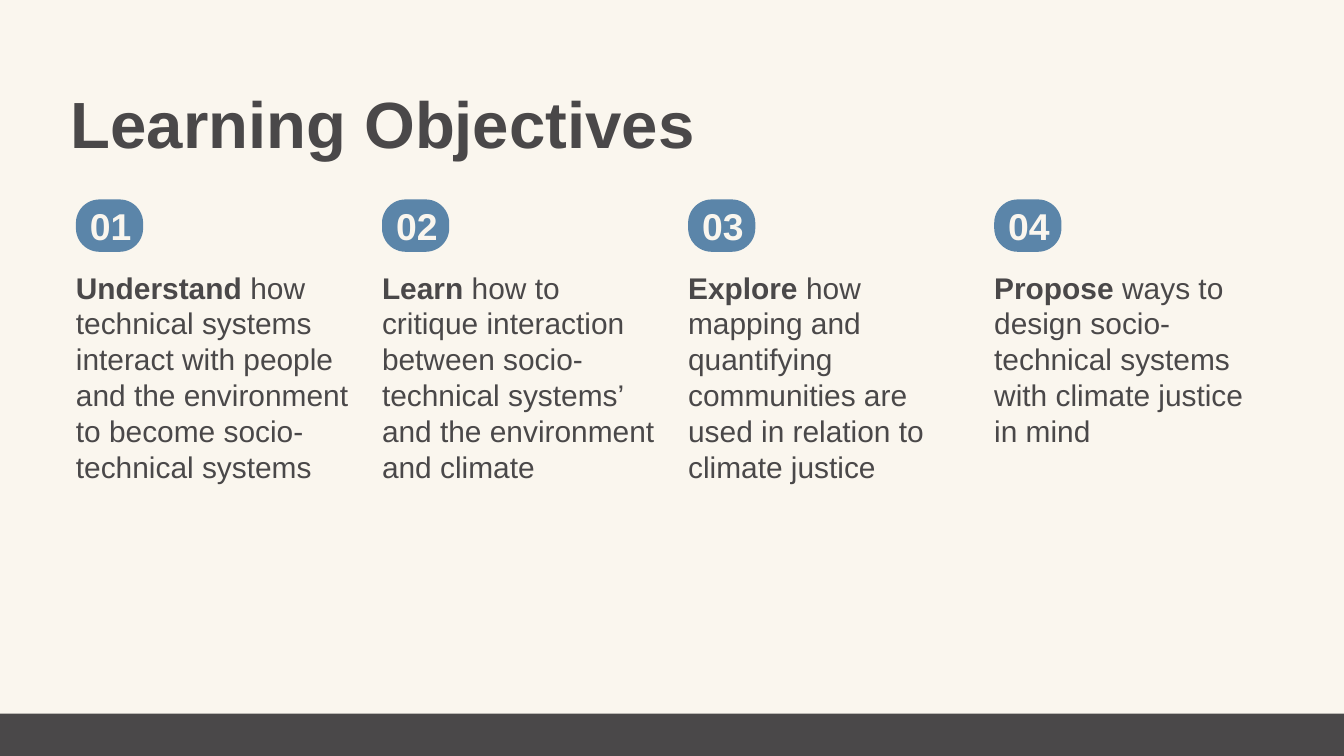
from pptx import Presentation
from pptx.dml.color import RGBColor
from pptx.enum.shapes import MSO_SHAPE as Shape
from pptx.enum.text import MSO_ANCHOR as Anchor, MSO_AUTO_SIZE as Fit, PP_ALIGN as Align
from pptx.util import Cm, Pt

CREAM, DARK, BLUE = "FAF6EE", "4A4849", "5B85A9"
WIDE, HIGH = 50.8, 28.58

GOALS = [
    ("Understand ", "how technical systems interact with people and the "
     "environment to become socio-technical systems"),
    ("Learn ", "how to critique interaction between socio-technical systems’ "
     "and the environment and climate"),
    ("Explore ", "how mapping and quantifying communities are used in "
     "relation to climate justice"),
    ("Propose ", "ways to design socio-technical systems with climate "
     "justice in mind"),
]


def paint(fill, tone):
    fill.solid()
    fill.fore_color.rgb = RGBColor.from_string(tone)


def place(shape, left, top, width, height):
    shape.left, shape.top = Cm(left), Cm(top)
    shape.width, shape.height = Cm(width), Cm(height)


def write(shape, bold, plain="", size=32, tone=DARK):
    """Fill a shape with a bold run and an optional plain one."""
    frame = shape.text_frame
    frame.word_wrap = True
    frame.auto_size = Fit.NONE
    frame.vertical_anchor = Anchor.TOP
    frame.margin_left = frame.margin_top = 0
    frame.margin_right = frame.margin_bottom = 0
    para = frame.paragraphs[0]
    para.alignment = Align.LEFT
    para.line_spacing = Pt(size * 1.2)
    para.space_before = Pt(0)
    for text, heavy in ((bold, True), (plain, False)):
        if text:
            run = para.add_run()
            run.text = text
            font = run.font
            font.name, font.size, font.bold = "Arial", Pt(size), heavy
            font.color.rgb = RGBColor.from_string(tone)


def add_block(shapes, kind, tone, left, top, width, height):
    block = shapes.add_shape(kind, Cm(left), Cm(top), Cm(width), Cm(height))
    block.shadow.inherit = False
    paint(block.fill, tone)
    block.line.fill.background()
    return block


def add_text(shapes, left, top, width, height, bold, **style):
    box = shapes.add_textbox(Cm(left), Cm(top), Cm(width), Cm(height))
    write(box, bold, **style)


def add_goal(slide, left, top, width, number, verb, rest):
    # Numbered badge
    badge = slide.shapes.add_group_shape().shapes
    pill = add_block(badge, Shape.ROUNDED_RECTANGLE, BLUE, left, top, 2.54, 1.98)
    pill.adjustments[0] = 0.45
    add_text(badge, left + 0.53, top + 0.13, 8.61, 1.7, f"{number:02}",
             size=40, tone=CREAM)
    # Description
    add_text(slide.shapes, left, top + 2.64, width, 9.58, verb, plain=rest)


def add_goals(slide, left, top, width, gap):
    for i, (verb, rest) in enumerate(GOALS):
        add_goal(slide, left + i * (width + gap), top, width, i + 1, verb, rest)


def main():
    deck = Presentation()
    deck.slide_width, deck.slide_height = Cm(WIDE), Cm(HIGH)
    slide = deck.slides.add_slide(deck.slide_layouts[5])
    paint(slide.background.fill, CREAM)

    # Title
    title = slide.shapes.title
    place(title, 2.67, 3.15, 45.26, 3)
    write(title, "Learning Objectives", size=70)

    # Footer band, bleeding past both edges
    add_block(slide.shapes, Shape.RECTANGLE, DARK, -0.97, HIGH - 1.6, 55.22, 1.6)

    # Four objectives
    add_goals(slide, 2.87, 7.54, 10.49, 1.08)
    deck.save("out.pptx")


if __name__ == "__main__":
    main()
